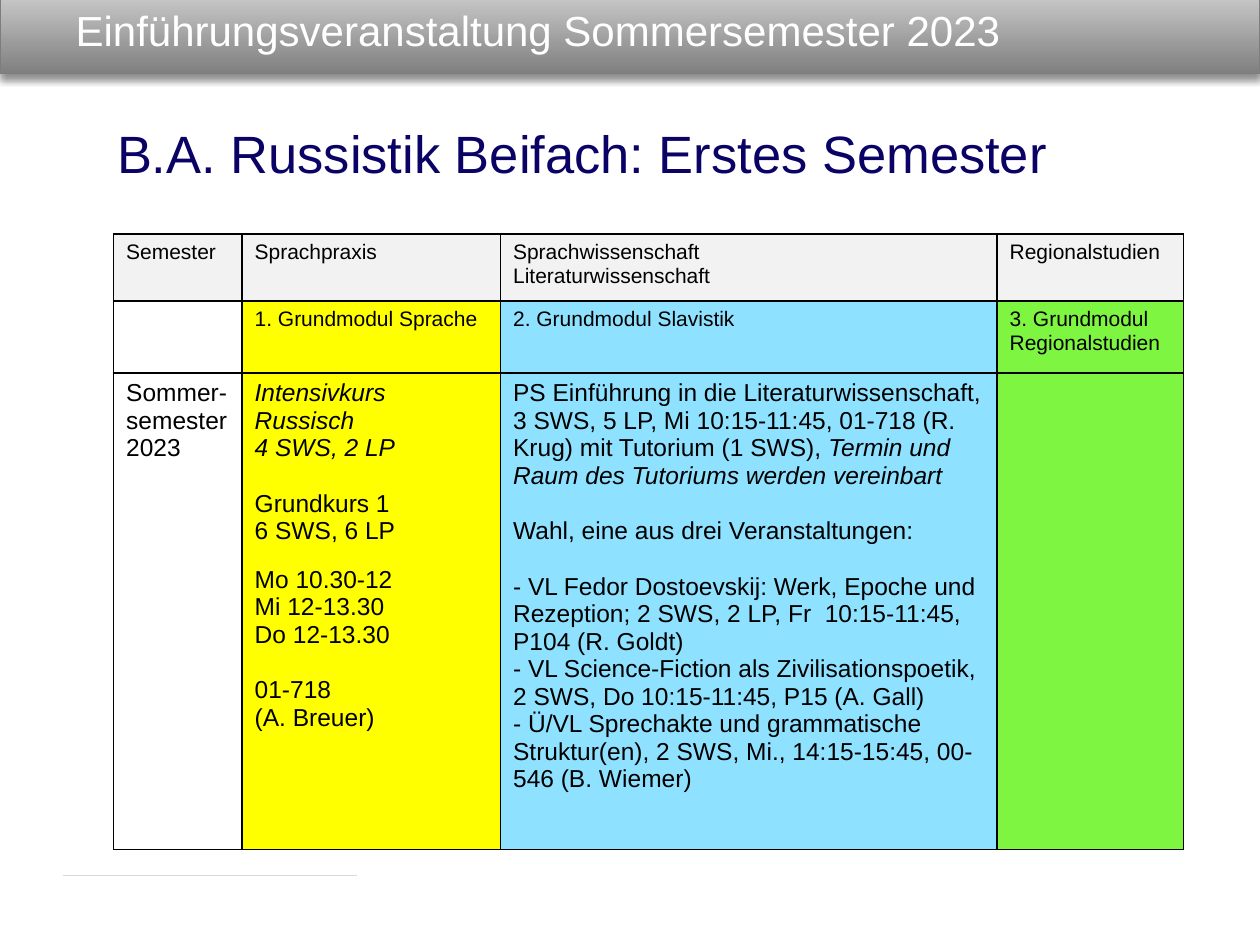
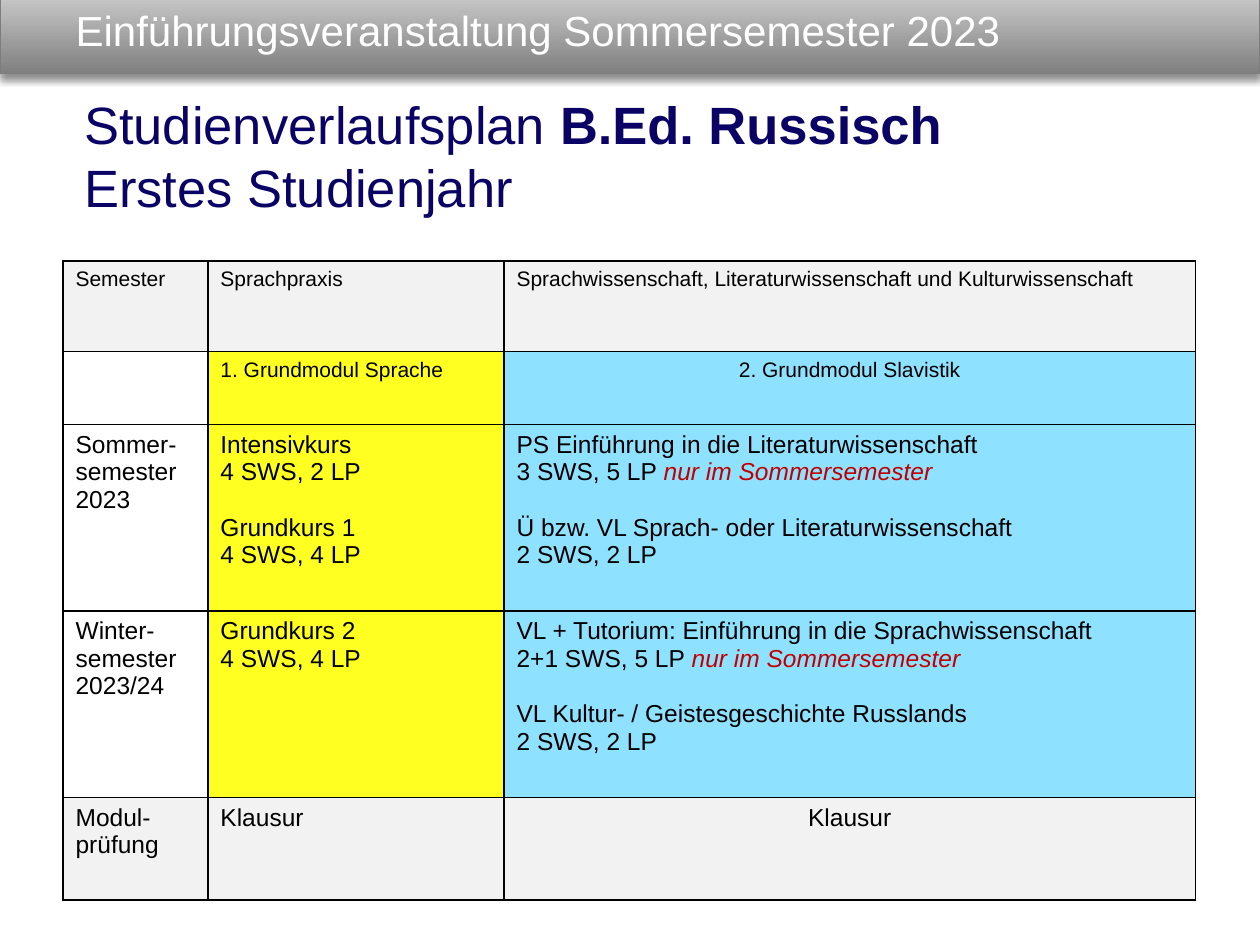
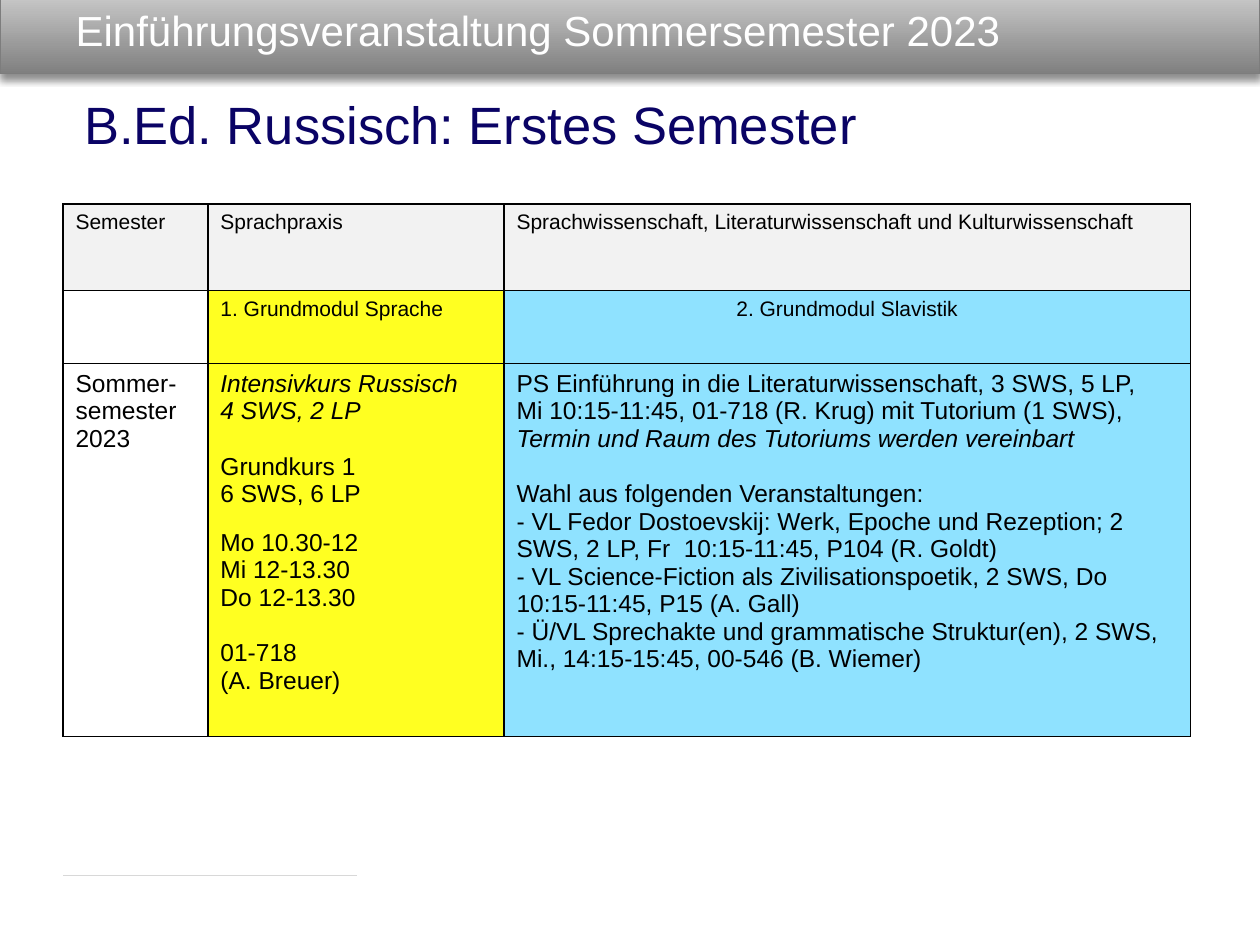
from lxml import etree
from pptx import Presentation
from pptx.dml.color import RGBColor
from pptx.enum.shapes import MSO_CONNECTOR, MSO_SHAPE
from pptx.enum.text import MSO_ANCHOR, MSO_AUTO_SIZE, PP_ALIGN
from pptx.oxml.ns import qn
from pptx.util import Cm, Pt

LEFT, CENTER = PP_ALIGN.LEFT, PP_ALIGN.CENTER
MIDDLE, NO_FIT = MSO_ANCHOR.MIDDLE, MSO_AUTO_SIZE.NONE
RECT, STRAIGHT = MSO_SHAPE.RECTANGLE, MSO_CONNECTOR.STRAIGHT

FONT = "Arial"
COLORS = {
    "black": "000000", "white": "FFFFFF", "navy": "0A0365", "red": "C00000",
    "grey": "F2F2F2", "yellow": "FFFF00", "lemon": "FFFF21", "blue": "8FE2FF",
    "green": "7DF541", "band_dark": "808080", "band_light": "CDCDCD",
    "band_line": "7D7D7D", "rule": "D8D8D8",
}
TITLE = "Einführungsveranstaltung Sommersemester 2023"
TITLE_BOX = (1.27, 0, 23.55, 1.19)
BAND_BOX = (0, -0.2, 25.4, 1.68)
RULE_ENDS = (1.27, 17.65, 7.19, 17.65)
LINE_GAP, SMALL_GAP = 16, 12


def rgb(name):
    """Return the named colour."""
    return RGBColor.from_string(COLORS[name])


def cms(values):
    """Turn centimetre values into lengths."""
    return [Cm(v) for v in values]


def para(*runs, gap=0, align=LEFT):
    """Describe a paragraph; a run is a string or a (text, format) pair."""
    return {"runs": runs, "gap": gap, "align": align}


def add_run(p, text, size=14, color="black", bold=False, italic=False):
    """Append formatted text to a paragraph."""
    r = p.add_run()
    r.text = text
    font = r.font
    font.name, font.size, font.bold, font.italic = FONT, Pt(size), bold, italic
    font.color.rgb = rgb(color)


def write(tf, paras, **fmt):
    """Fill a text frame with paragraphs that share a base format."""
    for i, item in enumerate(paras):
        item = para(item) if isinstance(item, str) else item
        p = tf.add_paragraph() if i else tf.paragraphs[0]
        p.alignment = item["align"]
        p.space_before = Pt(item["gap"])
        for run in item["runs"]:
            text, extra = (run, {}) if isinstance(run, str) else run
            add_run(p, text, **{**fmt, **extra})


def add_band(slide, box):
    """Draw the shaded header band."""
    sp = slide.shapes.add_shape(RECT, *cms(box))
    sp.fill.gradient()
    sp.fill.gradient_angle = 90
    for stop, name in zip(sp.fill.gradient_stops, ("band_dark", "band_light")):
        stop.color.rgb = rgb(name)
    sp.line.color.rgb = rgb("band_line")
    sp.line.width = Pt(0.75)
    sp.shadow.inherit = False
    effects = sp.element.spPr.find(qn("a:effectLst"))
    shadow = etree.SubElement(effects, qn("a:outerShdw"), blurRad=str(Pt(4)),
                              dist=str(Pt(3)), dir="5400000", rotWithShape="0")
    tint = etree.SubElement(shadow, qn("a:srgbClr"), val=COLORS["black"])
    etree.SubElement(tint, qn("a:alpha"), val="43000")
    return sp


def add_rule(slide, ends):
    """Draw the thin footer line."""
    line = slide.shapes.add_connector(STRAIGHT, *cms(ends))
    line.line.color.rgb = rgb("rule")
    line.line.width = Pt(0.75)
    etree.SubElement(line.element.spPr, qn("a:effectLst"))
    return line


def style_layout(layout, slide):
    """Give the layout its band, footer line and title position."""
    parts = [add_band(slide, BAND_BOX), add_rule(slide, RULE_ENDS)]
    for i, sp in enumerate(parts):
        sp.element.xpath(".//p:cNvPr")[0].set("id", str(100 + i))
        layout.shapes.element.insert(2 + i, sp.element)
    title = layout.placeholders[0]
    title.left, title.top, title.width, title.height = cms(TITLE_BOX)


def add_title(slide):
    """Fill the title placeholder in the band."""
    tf = slide.shapes.title.text_frame
    tf.auto_size, tf.vertical_anchor = NO_FIT, MIDDLE
    write(tf, [TITLE], size=24, color="white")


def add_heading(slide, box, paras):
    """Place the navy heading under the band."""
    tf = slide.shapes.add_textbox(*cms(box)).text_frame
    tf.word_wrap = True
    write(tf, paras, size=30, color="navy")


def add_borders(cell):
    """Draw black lines on all sides of a cell."""
    tc_pr = cell._tc.get_or_add_tcPr()
    for side in ("lnL", "lnR", "lnT", "lnB"):
        ln = etree.SubElement(tc_pr, qn(f"a:{side}"), w=str(Pt(1)))
        fill = etree.SubElement(ln, qn("a:solidFill"))
        etree.SubElement(fill, qn("a:srgbClr"), val=COLORS["black"])


def add_plan(slide, corner, widths, heights, rows):
    """Build the study plan; its two top rows have smaller text."""
    size = cms((sum(widths), sum(heights)))
    table = slide.shapes.add_table(len(heights), len(widths),
                                   *cms(corner), *size).table
    table.first_row = table.horz_banding = False
    for column, width in zip(table.columns, widths):
        column.width = Cm(width)
    for i, (row, height) in enumerate(zip(table.rows, heights)):
        row.height = Cm(height)
        for cell, (fill, *paras) in zip(row.cells, rows[i]):
            add_borders(cell)
            cell.fill.solid()
            cell.fill.fore_color.rgb = rgb(fill)
            write(cell.text_frame, paras, size=12 if i < 2 else 14)


ITALIC = {"italic": True}
ONLY_SUMMER = ("nur im Sommersemester", {"italic": True, "color": "red"})
TUTORIAL = ("Termin und Raum des Tutoriums werden vereinbart", ITALIC)
EMPTY = ("white",)
SUMMER = ("white", "Sommer-semester 2023")
LANGUAGE_COURSES = [
    para(("Intensivkurs Russisch", ITALIC)),
    para(("4 SWS, 2 LP", ITALIC)),
    para("Grundkurs 1", gap=LINE_GAP),
    "6 SWS, 6 LP",
    para("Mo 10.30-12", gap=SMALL_GAP),
    "Mi 12-13.30",
    "Do 12-13.30",
    para("01-718", gap=LINE_GAP),
    "(A. Breuer)",
]
DOSTOEVSKIJ = ("- VL Fedor Dostoevskij: Werk, Epoche und Rezeption; "
               "2 SWS, 2 LP, Fr  10:15-11:45, P104 (R. Goldt)")
OTHER_LECTURES = [
    "- VL Science-Fiction als Zivilisationspoetik, 2 SWS, "
    "Do 10:15-11:45, P15 (A. Gall)",
    "- Ü/VL Sprechakte und grammatische Struktur(en), 2 SWS, "
    "Mi., 14:15-15:45, 00-546 (B. Wiemer)",
]
TEACHING_TOP_ROWS = [
    [("grey", "Semester"), ("grey", "Sprachpraxis"),
     ("grey", "Sprachwissenschaft, Literaturwissenschaft "
              "und Kulturwissenschaft")],
    [EMPTY, ("lemon", "1. Grundmodul Sprache"),
     ("blue", para("2. Grundmodul Slavistik", align=CENTER))],
]

MINOR_SEMESTER = {
    "heading": ((2.11, 2.31, 21.41, 1.55),
                ["B.A. Russistik Beifach: Erstes Semester"]),
    "corner": (2.29, 4.72),
    "widths": (2.59, 5.21, 10.01, 3.76),
    "heights": (1.35, 1.45, 9.6),
    "rows": [
        [("grey", "Semester"), ("grey", "Sprachpraxis"),
         ("grey", "Sprachwissenschaft", "Literaturwissenschaft"),
         ("grey", "Regionalstudien")],
        [EMPTY, ("yellow", "1. Grundmodul Sprache"),
         ("blue", "2. Grundmodul Slavistik"),
         ("green", "3. Grundmodul Regionalstudien")],
        [SUMMER, ("yellow", *LANGUAGE_COURSES),
         ("blue",
          para("PS Einführung in die Literaturwissenschaft, 3 SWS, 5 LP, "
               "Mi 10:15-11:45, 01-718 (R. Krug) mit Tutorium (1 SWS), ",
               TUTORIAL),
          para("Wahl, eine aus drei Veranstaltungen:", gap=LINE_GAP),
          para(DOSTOEVSKIJ, gap=LINE_GAP),
          *OTHER_LECTURES),
         ("green",)],
    ],
}
TEACHING_YEAR = {
    "heading": ((1.45, 1.73, 22.05, 2.79),
                [para("Studienverlaufsplan ",
                      ("B.Ed. Russisch", {"bold": True})),
                 "Erstes Studienjahr"]),
    "corner": (1.27, 5.26),
    "widths": (2.92, 5.97, 13.94),
    "heights": (1.83, 1.47, 3.76, 3.76, 2.06),
    "rows": TEACHING_TOP_ROWS + [
        [SUMMER,
         ("lemon", "Intensivkurs", "4 SWS, 2 LP",
          para("Grundkurs 1", gap=LINE_GAP), "4 SWS, 4 LP"),
         ("blue", "PS Einführung in die Literaturwissenschaft",
          para("3 SWS, 5 LP ", ONLY_SUMMER),
          para("Ü bzw. VL Sprach- oder Literaturwissenschaft", gap=LINE_GAP),
          "2 SWS, 2 LP")],
        [("white", "Winter-semester", "2023/24"),
         ("lemon", "Grundkurs 2", "4 SWS, 4 LP"),
         ("blue", "VL + Tutorium: Einführung in die Sprachwissenschaft",
          para("2+1 SWS, 5 LP ", ONLY_SUMMER),
          para("VL Kultur- / Geistesgeschichte Russlands", gap=LINE_GAP),
          "2 SWS, 2 LP")],
        [("grey", "Modul-prüfung"), ("grey", "Klausur"),
         ("grey", para("Klausur", align=CENTER))],
    ],
}
TEACHING_SEMESTER = {
    "heading": ((1.45, 1.73, 22.05, 1.55),
                ["B.Ed. Russisch: Erstes Semester"]),
    "corner": (1.27, 4.11),
    "widths": (2.92, 5.97, 13.84),
    "heights": (1.75, 1.47, 7.52),
    "rows": TEACHING_TOP_ROWS + [
        [SUMMER, ("lemon", *LANGUAGE_COURSES),
         ("blue", "PS Einführung in die Literaturwissenschaft, 3 SWS, 5 LP,",
          para("Mi 10:15-11:45, 01-718 (R. Krug) mit Tutorium (1 SWS), ",
               TUTORIAL),
          para("Wahl aus folgenden Veranstaltungen:", gap=LINE_GAP),
          DOSTOEVSKIJ, *OTHER_LECTURES)],
    ],
}


def build_slide(slide, plan):
    """Place title, heading and study plan on a slide."""
    add_title(slide)
    add_plan(slide, plan["corner"], plan["widths"], plan["heights"],
             plan["rows"])
    add_heading(slide, *plan["heading"])


def main():
    """Build the presentation and save it."""
    prs = Presentation()
    prs.slide_width, prs.slide_height = cms((25.4, 19.05))
    layout = prs.slide_layouts[5]
    plans = (MINOR_SEMESTER, TEACHING_YEAR, TEACHING_SEMESTER)
    slides = [prs.slides.add_slide(layout) for _ in plans]
    style_layout(layout, slides[0])
    for slide, plan in zip(slides, plans):
        build_slide(slide, plan)
    prs.save("out.pptx")


if __name__ == "__main__":
    main()
